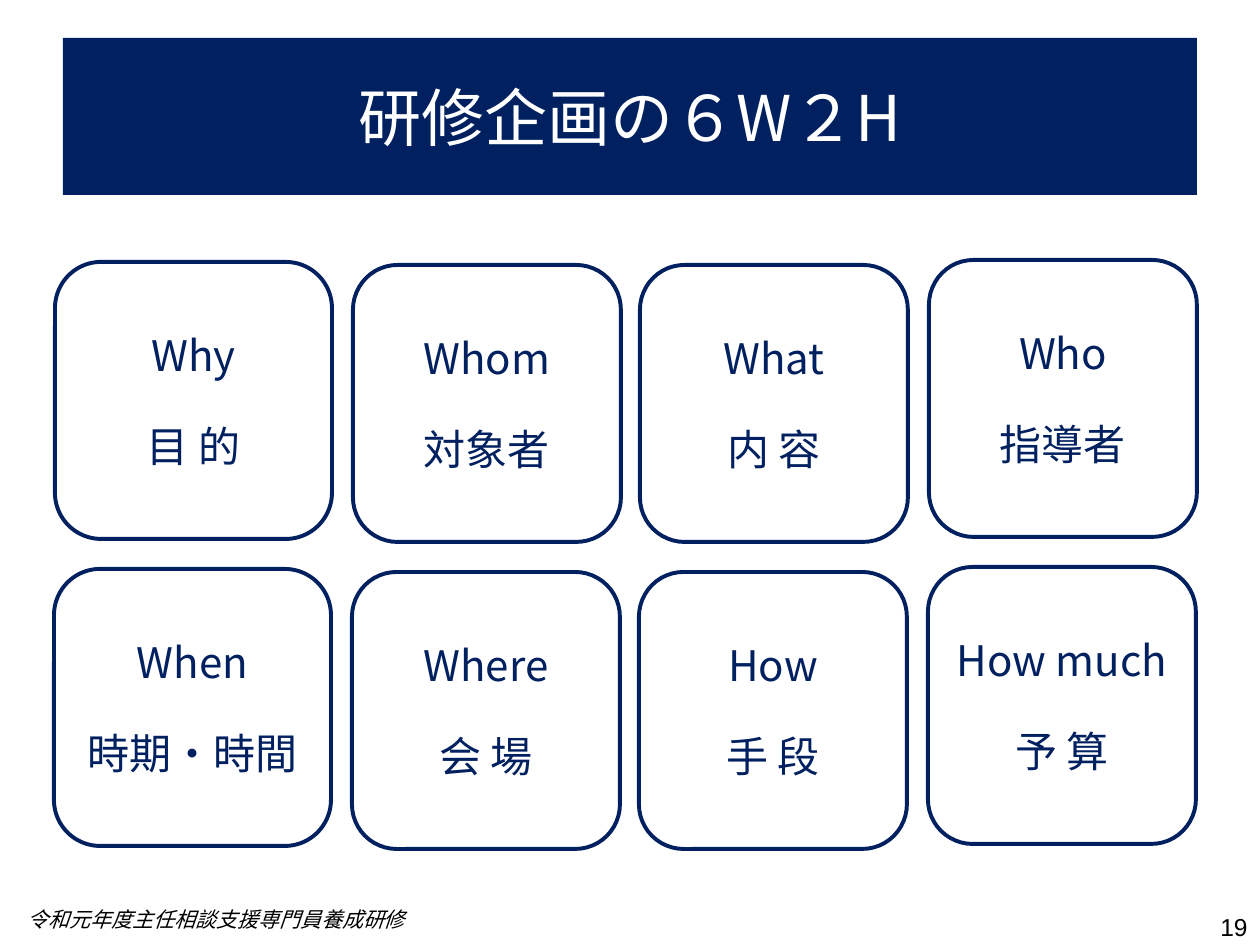
from pptx import Presentation
from pptx.dml.color import RGBColor
from pptx.enum.shapes import MSO_SHAPE
from pptx.enum.text import MSO_ANCHOR, PP_ALIGN
from pptx.oxml.ns import qn
from pptx.util import Emu, Pt
from lxml.etree import SubElement

PX = 914400 // 126
NAVY = RGBColor(0x00, 0x20, 0x60)
WHITE = RGBColor(0xFF, 0xFF, 0xFF)
BLACK = RGBColor(0x00, 0x00, 0x00)
JAPANESE_FONT = "Noto Sans CJK JP"

TITLE = "研修企画の６W２H"
FOOTER = "令和元年度主任相談支援専門員養成研修"
PAGE_NUMBER = "19"
CARD_ROWS = [
    [("Why", "目 的"), ("Whom", "対象者"), ("What", "内 容"), ("Who", "指導者")],
    [("When", "時期・時間"), ("Where", "会 場"), ("How", "手 段"), ("How much", "予 算")],
]
# left, top and width of each column's first card
COLUMNS = [(55, 262, 277), (353, 265, 268), (640, 265, 268), (929, 260, 268)]
CARD_HEIGHT = 277
ROW_SHIFT = (-1, 307)
CARD_SIDE_INSET = 5
TERM_GAP = Pt(23)


def px(*values):
    return [Emu(value * PX) for value in values]


def write(shape, lines, size, color, align, font=JAPANESE_FONT, italic=False):
    frame = shape.text_frame
    frame.word_wrap = True
    frame.text = "\n".join(lines)
    for paragraph in frame.paragraphs:
        paragraph.alignment = align
        for run in paragraph.runs:
            run.font.name = font
            run.font.size = Pt(size)
            run.font.italic = italic
            run.font.color.rgb = color
            SubElement(run.font._element, qn("a:ea")).set("typeface", font)


def add_box(slide, preset, box):
    shape = slide.shapes.add_shape(preset, *px(*box))
    shape.shadow.inherit = False
    shape.text_frame.vertical_anchor = MSO_ANCHOR.MIDDLE
    return shape


def add_card(slide, box, term, meaning):
    card = add_box(slide, MSO_SHAPE.ROUNDED_RECTANGLE, box)
    card.fill.background()
    card.line.color.rgb = NAVY
    card.line.width = Pt(2.25)
    frame = card.text_frame
    frame.margin_left, frame.margin_right = px(CARD_SIDE_INSET, CARD_SIDE_INSET)
    write(card, [term, meaning], 24, NAVY, PP_ALIGN.CENTER)
    frame.paragraphs[1].space_before = TERM_GAP


def main():
    presentation = Presentation()
    presentation.slide_width, presentation.slide_height = px(1260, 945)
    slide = presentation.slides.add_slide(presentation.slide_layouts[6])

    banner = add_box(slide, MSO_SHAPE.RECTANGLE, (63, 38, 1134, 157))
    banner.fill.solid()
    banner.fill.fore_color.rgb = NAVY
    banner.line.fill.background()
    write(banner, [TITLE], 36, WHITE, PP_ALIGN.CENTER)

    for row, cards in enumerate(CARD_ROWS):
        for (left, top, width), (term, meaning) in zip(COLUMNS, cards):
            box = (left + row * ROW_SHIFT[0], top + row * ROW_SHIFT[1], width, CARD_HEIGHT)
            add_card(slide, box, term, meaning)

    footer = slide.shapes.add_textbox(*px(15, 900, 496, 38))
    write(footer, [FOOTER], 12, BLACK, PP_ALIGN.LEFT, italic=True)
    number = slide.shapes.add_textbox(*px(966, 906, 294, 37))
    write(number, [PAGE_NUMBER], 14, BLACK, PP_ALIGN.RIGHT, font="Arial")

    presentation.save("out.pptx")


if __name__ == "__main__":
    main()
